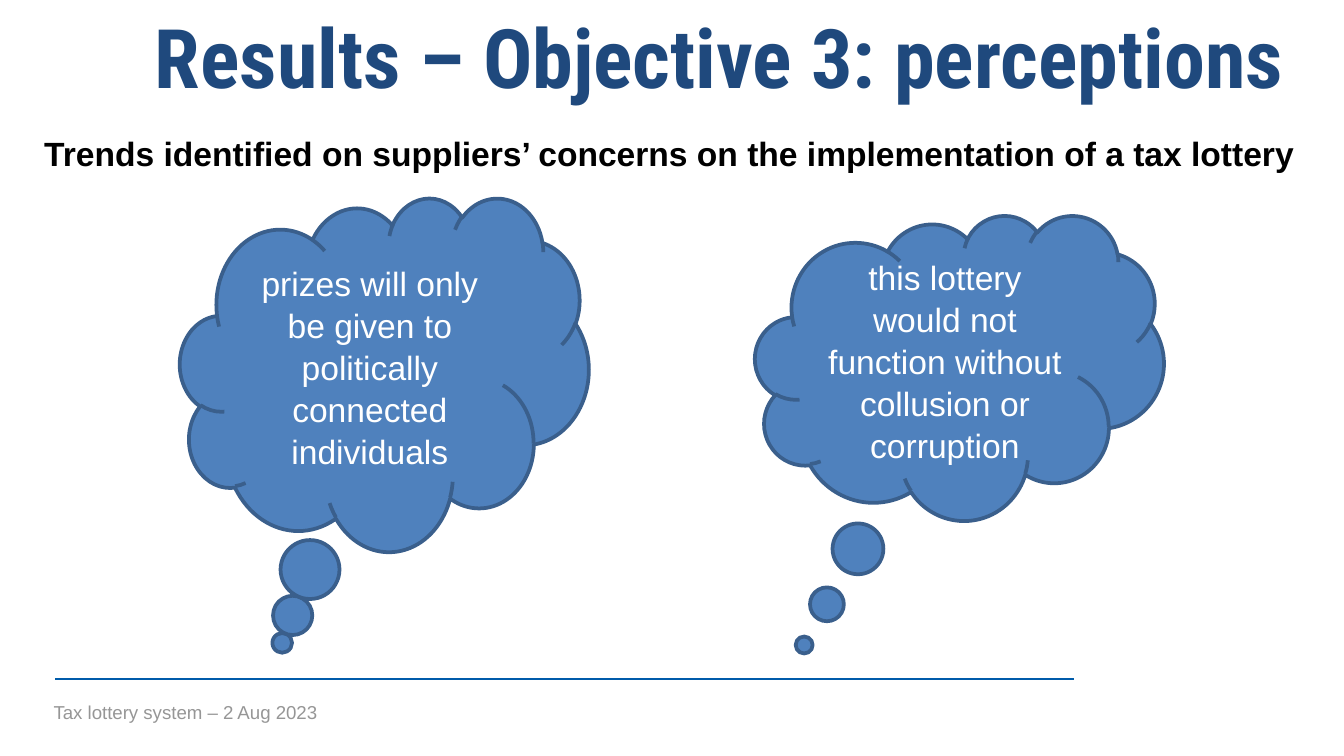
from dataclasses import dataclass

from pptx import Presentation
from pptx.dml.color import RGBColor
from pptx.enum.shapes import MSO_CONNECTOR, MSO_SHAPE
from pptx.enum.text import MSO_ANCHOR, MSO_AUTO_SIZE, PP_ALIGN
from pptx.oxml.ns import qn
from pptx.util import Pt
from lxml import etree

STRAIGHT = MSO_CONNECTOR.STRAIGHT
CLOUD = MSO_SHAPE.CLOUD_CALLOUT
TOP, MIDDLE = MSO_ANCHOR.TOP, MSO_ANCHOR.MIDDLE
NO_FIT = MSO_AUTO_SIZE.NONE
LEFT, CENTER, JUSTIFY = PP_ALIGN.LEFT, PP_ALIGN.CENTER, PP_ALIGN.JUSTIFY

NAVY = RGBColor(0x1F, 0x49, 0x7D)
BLUE = RGBColor(0x4F, 0x81, 0xBD)
OUTLINE = RGBColor(0x3A, 0x5F, 0x8C)
RULE = RGBColor(0x00, 0x5B, 0xAA)
GREY = RGBColor(0x96, 0x96, 0x96)
BLACK = RGBColor(0, 0, 0)
WHITE = RGBColor(0xFF, 0xFF, 0xFF)

TITLE_FONT = {"name": "Roboto Condensed", "size": Pt(44), "bold": True}
HEADING_FONT = {"name": "Arial", "size": Pt(18), "bold": True}
CLOUD_FONT = {"name": "Arial", "size": Pt(18)}
FOOTER_FONT = {"name": "Arial", "size": Pt(10)}


@dataclass
class Box:
    left: float
    top: float
    width: float
    height: float


@dataclass
class Thought:
    text: str
    box: Box
    tail: tuple[float, float]


THOUGHTS = [
    Thought("prizes will only be given to politically connected individuals",
            Box(96.5, 105.8, 218.9, 189.4), (-0.25, 0.76)),
    Thought("this lottery would not function without collusion or corruption",
            Box(404.6, 115.2, 218.9, 163.4), (-0.38, 0.91)),
]


def lengths(box: Box) -> tuple:
    return Pt(box.left), Pt(box.top), Pt(box.width), Pt(box.height)


def write(sp, text: str, font: dict, color: RGBColor, align, anchor=TOP,
          inset: tuple[float, float] = (7.2, 3.6)) -> None:
    tf = sp.text_frame
    x, y = map(Pt, inset)
    frame = {"word_wrap": True, "auto_size": NO_FIT, "vertical_anchor": anchor,
             "margin_left": x, "margin_right": x,
             "margin_top": y, "margin_bottom": y}
    for name, value in frame.items():
        setattr(tf, name, value)
    p = tf.paragraphs[0]
    p.alignment = align
    r = p.add_run()
    r.text = text
    for name, value in font.items():
        setattr(r.font, name, value)
    r.font.color.rgb = color


def add_title(slide, text: str, box: Box) -> None:
    sp = slide.shapes.title
    sp.left, sp.top, sp.width, sp.height = lengths(box)
    write(sp, text, TITLE_FONT, NAVY, CENTER, inset=(3.6, 1.44))


def add_label(slide, text: str, box: Box, font: dict, color: RGBColor, align) -> None:
    sp = slide.shapes.add_textbox(*lengths(box))
    write(sp, text, font, color, align)


def add_rule(slide, left: float, right: float, y: float) -> None:
    line = slide.shapes.add_connector(STRAIGHT, Pt(left), Pt(y), Pt(right), Pt(y))
    line.line.color.rgb = RULE
    line.line.width = Pt(1)
    etree.SubElement(line._element.spPr, qn("a:effectLst"))


def add_thought(slide, thought: Thought) -> None:
    sp = slide.shapes.add_shape(CLOUD, *lengths(thought.box))
    sp.shadow.inherit = False
    sp.adjustments[0], sp.adjustments[1] = thought.tail
    sp.fill.solid()
    sp.fill.fore_color.rgb = BLUE
    sp.line.color.rgb = OUTLINE
    sp.line.width = Pt(2)
    write(sp, thought.text, CLOUD_FONT, WHITE, CENTER, MIDDLE)
    sp.text_frame.paragraphs[0].line_spacing = 1.04


def main() -> None:
    prs = Presentation()
    prs.slide_width, prs.slide_height = Pt(720), Pt(405)
    slide = prs.slides.add_slide(prs.slide_layouts[5])
    add_rule(slide, 29.5, 575.3, 363.6)
    add_label(slide, "Tax lottery system – 2 Aug 2023",
              Box(21.6, 372.2, 553.7, 19.4), FOOTER_FONT, GREY, LEFT)
    add_label(slide, "Trends identified on suppliers’ concerns on the implementation of a tax lottery",
              Box(16.6, 67.7, 694, 28.8), HEADING_FONT, BLACK, JUSTIFY)
    add_title(slide, "Results – Objective 3: perceptions", Box(67, 2.2, 637.2, 56.9))
    for thought in THOUGHTS:
        add_thought(slide, thought)
    prs.save("out.pptx")


if __name__ == "__main__":
    main()
